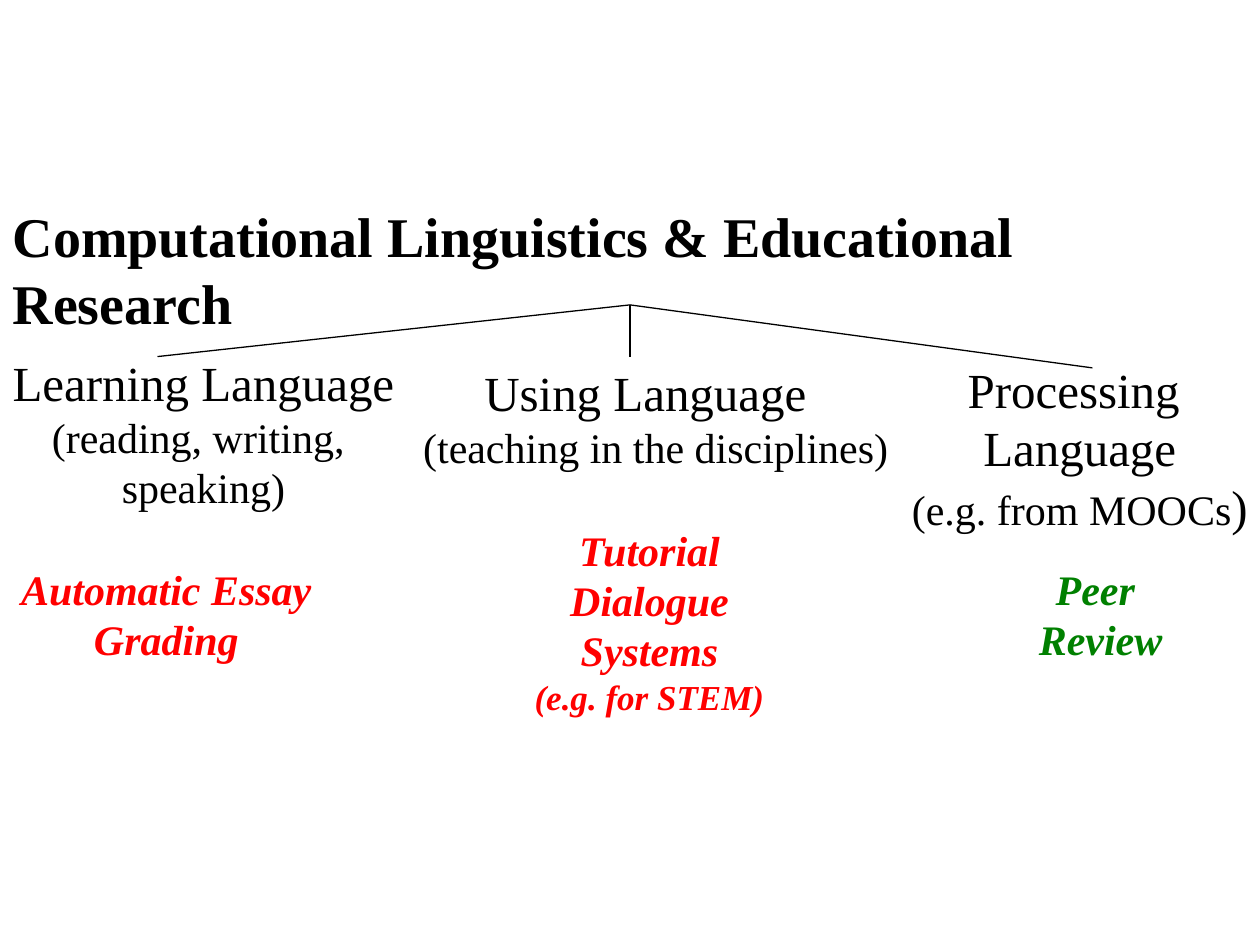
from lxml.etree import SubElement
from pptx import Presentation
from pptx.dml.color import RGBColor
from pptx.enum.shapes import MSO_CONNECTOR
from pptx.enum.text import MSO_ANCHOR, MSO_AUTO_SIZE, PP_ALIGN
from pptx.oxml.ns import qn
from pptx.util import Inches, Pt

FONT = "Times New Roman"
BLACK, RED, GREEN = "000000", "FF0000", "008000"

# Content: each line is a list of (text, size) runs
TITLE = "Computational Linguistics & Educational Research"
BRANCHES = [  # box, lines
    ((0, 2.75, 3.23, 1.77),
     [[("Learning Language", 28)], [("(reading, writing, ", 24)], [("speaking)", 24)]]),
    ((3.24, 2.83, 3.93, 0.98),
     [[("Using Language", 28), ("  ", 24)], [("(teaching in the disciplines)", 24)]]),
    ((7.12, 2.8, 2.9, 1.51),
     [[("Processing ", 28)], [("Language", 28)], [("(e.g. from MOOCs", 24), (")", 28)]]),
]
EXAMPLES = [  # box, lines, colour, wrap
    ((3.84, 4.11, 2.63, 2.12),
     [[("Tutorial Dialogue", 24)], [("Systems", 24)], [("(e.g. for STEM)", 20)]], RED, True),
    ((0, 4.42, 2.64, 1.31), [[("Automatic Essay", 24)], [("Grading", 24)]], RED, False),
    ((7.61, 4.42, 2.25, 1.31), [[("Peer ", 24)], [("Review", 24)]], GREEN, True),
]
ROOT = (5, 2.42)
BRANCH_ENDS = [(1.25, 2.83), (5, 2.83), (8.67, 2.92)]


def rgb(value):
    return RGBColor.from_string(value)


def write(sp, lines, color=BLACK, bold=False, italic=False,
          align=PP_ALIGN.CENTER, wrap=True):
    tf = sp.text_frame
    tf.word_wrap = wrap
    tf.auto_size = MSO_AUTO_SIZE.SHAPE_TO_FIT_TEXT
    tf.vertical_anchor = MSO_ANCHOR.TOP
    for i, line in enumerate(lines):
        p = tf.add_paragraph() if i else tf.paragraphs[0]
        p.alignment = align
        for text, size in line:
            r = p.add_run()
            r.text = text
            f = r.font
            f.name, f.size, f.bold, f.italic = FONT, Pt(size), bold, italic
            f.color.rgb = rgb(color)


def add_text(s, box, lines, **fmt):
    write(s.shapes.add_textbox(*map(Inches, box)), lines, **fmt)


def add_line(s, start, end):
    line = s.shapes.add_connector(MSO_CONNECTOR.STRAIGHT, *map(Inches, start + end))
    line.line.color.rgb = rgb(BLACK)
    line.line.width = Pt(0.75)
    SubElement(line._element.spPr, qn("a:effectLst"))


def main():
    prs = Presentation()
    prs.slide_width, prs.slide_height = Inches(10), Inches(7.5)
    s = prs.slides.add_slide(prs.slide_layouts[5])

    # Title
    title = s.shapes.title
    title.left, title.top, title.width, title.height = map(Inches, (0, 1.55, 9.99, 0.64))
    write(title, [[(TITLE, 32)]], bold=True, align=PP_ALIGN.LEFT)

    # Research branches and their examples
    for box, lines in BRANCHES:
        add_text(s, box, lines, wrap=False)
    for box, lines, color, wrap in EXAMPLES:
        add_text(s, box, lines, color=color, bold=True, italic=True, wrap=wrap)

    # Tree lines
    for end in BRANCH_ENDS:
        add_line(s, ROOT, end)

    prs.save("out.pptx")


if __name__ == "__main__":
    main()
